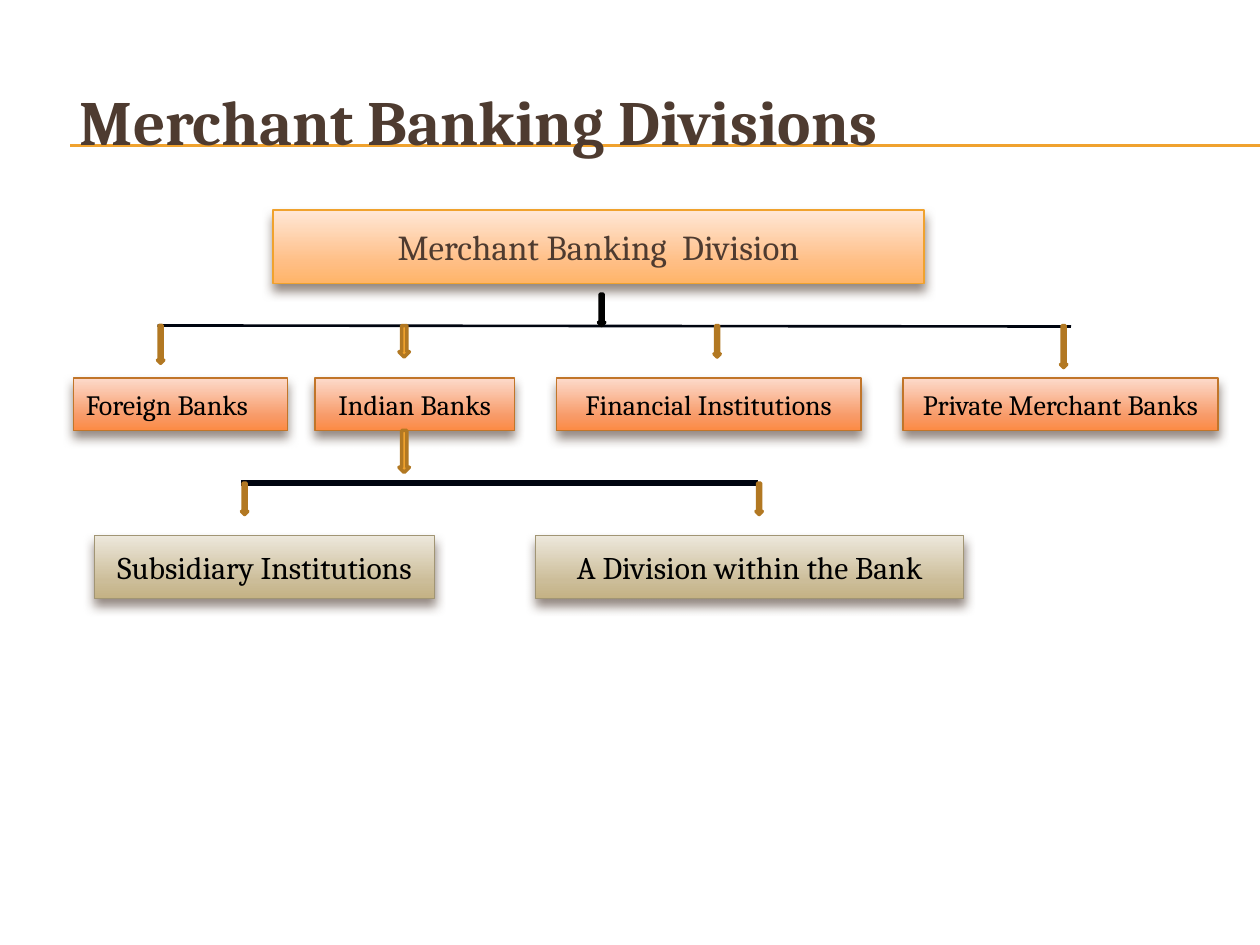
from lxml import etree
from pptx import Presentation
from pptx.dml.color import RGBColor
from pptx.enum.shapes import MSO_CONNECTOR, MSO_SHAPE
from pptx.enum.text import MSO_ANCHOR, PP_ALIGN
from pptx.oxml import parse_xml
from pptx.oxml.ns import nsdecls, qn
from pptx.util import Inches, Pt

RECT, ARROW = MSO_SHAPE.RECTANGLE, MSO_SHAPE.DOWN_ARROW
LINE, MIDDLE = MSO_CONNECTOR.STRAIGHT, MSO_ANCHOR.MIDDLE
LEFT, CENTER, JUST = PP_ALIGN.LEFT, PP_ALIGN.CENTER, PP_ALIGN.JUSTIFY

deck = Presentation()
deck.slide_width, deck.slide_height = Inches(10), Inches(7.5)
slide = deck.slides.add_slide(deck.slide_layouts[6])
shapes = slide.shapes
col, row = deck.slide_width / 120, deck.slide_height / 90


def paint(tone):
    return RGBColor.from_string(tone)


def write(shape, words, size, tone, align, bold=False):
    frame = shape.text_frame
    frame.word_wrap = True
    frame.vertical_anchor = MIDDLE
    para = frame.paragraphs[0]
    para.alignment = align
    run = para.add_run()
    run.text = words
    run.font.name = "Cambria"
    run.font.size = Pt(size)
    run.font.bold = bold
    run.font.color.rgb = paint(tone)


rules = [
    (6.7, 13.8, 120, 13.8, "F0A22E", 0.75),
    (6.7, 13.9, 120, 13.9, "F0A22E", 0.75),
    (15, 31, 102, 31.1, "000510", 1.5),
    (23, 46, 72.2, 46, "000510", 3),
]
for x, y, end, base, tone, width in rules:
    rule = shapes.add_connector(
        LINE, int(x * col), int(y * row), int(end * col), int(base * row))
    rule.line.color.rgb = paint(tone)
    rule.line.width = Pt(width)
    etree.SubElement(rule._element.spPr, qn("a:effectLst"))

title = shapes.add_textbox(int(4 * col), int(6 * row), int(114 * col), int(11 * row))
title.text_frame.margin_left = Inches(0.3)
write(title, "Merchant Banking Divisions", 36, "4E3B30", LEFT, True)

gold = ("FFE7D7", "FFBE84", "FFB468", "F0A22E", "4E3B30", 20)
coral = ("FDDBCC", "F89B69", "FC8A43", "C17529", "000000", 16)
sand = ("EDE8DC", "CCBD99", "C4B284", "A19574", "000000", 18)
boxes = [
    ("Merchant Banking  Division", 26, 20, 62, 7, gold, CENTER),
    ("Foreign Banks", 7, 36, 20.4, 5, coral, JUST),
    ("Indian Banks", 30, 36, 19, 5, coral, CENTER),
    ("Financial Institutions", 53, 36, 29, 5, coral, CENTER),
    ("Private Merchant Banks", 86, 36, 30, 5, coral, CENTER),
    ("Subsidiary Institutions", 9, 51, 32.4, 6, sand, CENTER),
    ("A Division within the Bank", 51, 51, 40.8, 6, sand, CENTER),
]
for words, x, y, wide, high, look, align in boxes:
    top, mid, low, edge, ink, size = look
    box = shapes.add_shape(
        RECT, int(x * col), int(y * row), int(wide * col), int(high * row))
    stops = "".join(
        f'<a:gs pos="{pos}"><a:srgbClr val="{tone}"/></a:gs>'
        for pos, tone in ((0, top), (72000, mid), (100000, low)))
    props = box._element.spPr
    props.append(parse_xml(
        f'<a:gradFill {nsdecls("a")} rotWithShape="1"><a:gsLst>{stops}</a:gsLst>'
        '<a:lin ang="5400000" scaled="0"/></a:gradFill>'))
    box.line.color.rgb = paint(edge)
    box.line.width = Pt(0.79)
    props.append(parse_xml(
        f'<a:effectLst {nsdecls("a")}><a:outerShdw blurRad="{Pt(6)}" dist="{Pt(4)}" '
        'dir="5400000" rotWithShape="0"><a:srgbClr val="4E3B30">'
        '<a:alpha val="60000"/></a:srgbClr></a:outerShdw></a:effectLst>'))
    write(box, words, size, ink, align)

dark, amber = ("000510", "000000"), ("F0A22E", "B27822")
arrows = [
    (57, 28, 0.6, 3, dark),
    (15, 31, 0.6, 3.6, amber),
    (38, 31, 1, 3, amber),
    (68, 31, 0.6, 3, amber),
    (101, 31, 0.6, 4, amber),
    (38, 41, 1, 4, amber),
    (23, 46, 0.6, 3, amber),
    (72, 46, 0.6, 3, amber),
]
for x, y, wide, high, (fill, edge) in arrows:
    arrow = shapes.add_shape(
        ARROW, int(x * col), int(y * row), int(wide * col), int(high * row))
    arrow.shadow.inherit = False
    arrow.fill.solid()
    arrow.fill.fore_color.rgb = paint(fill)
    arrow.line.color.rgb = paint(edge)
    arrow.line.width = Pt(2)

deck.save("out.pptx")
